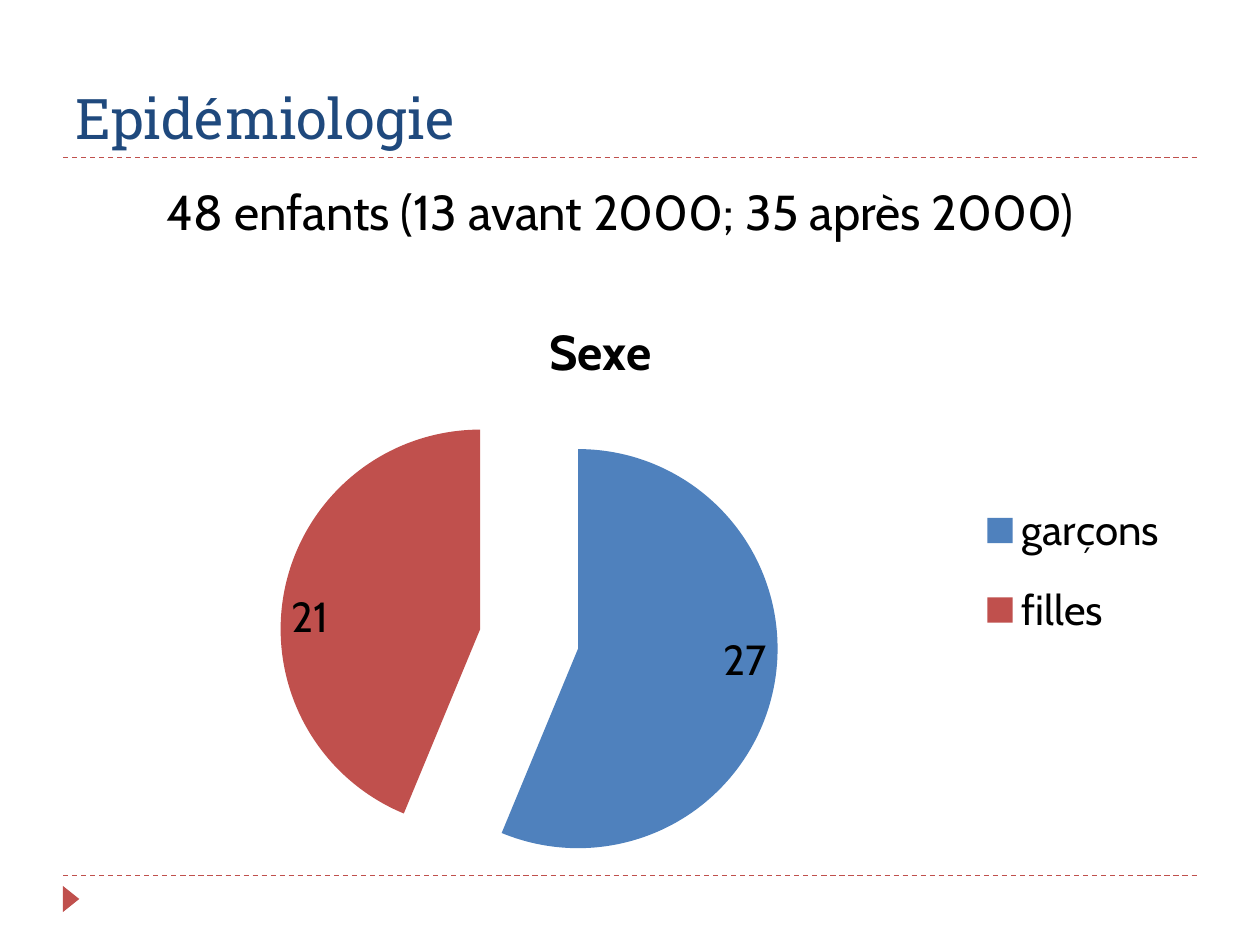
from dataclasses import dataclass

from lxml import etree
from pptx import Presentation
from pptx.chart.data import CategoryChartData
from pptx.dml.color import RGBColor
from pptx.enum.chart import XL_CHART_TYPE, XL_LABEL_POSITION, XL_LEGEND_POSITION
from pptx.enum.dml import MSO_LINE
from pptx.enum.shapes import MSO_CONNECTOR, MSO_SHAPE
from pptx.enum.text import MSO_ANCHOR, PP_ALIGN
from pptx.oxml import parse_xml
from pptx.oxml.ns import nsdecls, qn
from pptx.util import Pt

PIE = XL_CHART_TYPE.PIE
INSIDE_END = XL_LABEL_POSITION.INSIDE_END
RIGHT = XL_LEGEND_POSITION.RIGHT
DASH = MSO_LINE.DASH
STRAIGHT = MSO_CONNECTOR.STRAIGHT
TRIANGLE = MSO_SHAPE.ISOSCELES_TRIANGLE
BOTTOM, TOP = MSO_ANCHOR.BOTTOM, MSO_ANCHOR.TOP
LEFT, CENTER = PP_ALIGN.LEFT, PP_ALIGN.CENTER


@dataclass(frozen=True)
class Theme:
    """Colours, fonts and type sizes of the slide."""
    navy: RGBColor = RGBColor(0x1F, 0x49, 0x7D)
    red: RGBColor = RGBColor(0xC0, 0x50, 0x4D)
    blue: RGBColor = RGBColor(0x4F, 0x81, 0xBD)
    black: RGBColor = RGBColor(0, 0, 0)
    head_font: str = "Roboto Slab"
    body_font: str = "Cabin"
    title: int = 32
    lead: int = 28
    label: int = 24
    base: int = 18


T = Theme()


def set_font(font, size, color=T.black, name=T.body_font, bold=False):
    """Apply typeface, size, colour and weight to a font."""
    font.name, font.size, font.bold = name, Pt(size), bold
    font.color.rgb = color


def write(tf, text, align=LEFT, anchor=TOP, **fmt):
    """Put one formatted paragraph into a text frame."""
    tf.word_wrap = True
    tf.vertical_anchor = anchor
    p = tf.paragraphs[0]
    p.alignment = align
    r = p.add_run()
    r.text = text
    set_font(r.font, **fmt)


def add_rule(s, x, y, w):
    """Draw a dashed horizontal rule."""
    line = s.shapes.add_connector(STRAIGHT, Pt(x), Pt(y), Pt(x + w), Pt(y))
    line.line.color.rgb = T.red
    line.line.width = Pt(0.75)
    line.line.dash_style = DASH
    etree.SubElement(line._element.spPr, qn("a:effectLst"))


def add_frame(s, x, top, w, h):
    """Draw the two rules and the footer marker."""
    for y in (top + h, top):
        add_rule(s, x, y, w)
    sp = s.shapes.add_shape(TRIANGLE, Pt(x - 2.9), Pt(top + h + 8.6), Pt(15), Pt(9.4))
    sp.rotation = 90
    sp.shadow.inherit = False
    sp.fill.solid()
    sp.fill.fore_color.rgb = T.red
    sp.line.fill.background()


def add_title(s, text, x, y, w, h):
    """Place and fill the title placeholder."""
    sp = s.shapes.title
    sp.left, sp.top, sp.width, sp.height = Pt(x), Pt(y), Pt(w), Pt(h)
    write(sp.text_frame, text, anchor=BOTTOM, size=T.title,
          color=T.navy, name=T.head_font)


def add_lead(s, text, x, y, w, h):
    """Add the centred line below the title."""
    sp = s.shapes.add_textbox(Pt(x), Pt(y), Pt(w), Pt(h))
    write(sp.text_frame, text, align=CENTER, size=T.lead)


def set_layout(el, successors, inner=False, **box):
    """Fix a chart part at fractions of the chart area."""
    for old in el.findall(qn("c:layout")):
        el.remove(old)
    target = '<c:layoutTarget val="inner"/>' if inner else ""
    modes = "".join(f'<c:{k}Mode val="edge"/>' for k in "xy")
    sizes = "".join(f'<c:{k} val="{v}"/>' for k, v in box.items())
    layout = parse_xml(f'<c:layout {nsdecls("c")}><c:manualLayout>'
                       f'{target}{modes}{sizes}</c:manualLayout></c:layout>')
    el.insert_element_before(layout, *successors)


def add_pie(s, title, values, colors, x, y, w, h):
    """Add the exploded pie with its title, labels and legend."""
    data = CategoryChartData()
    data.categories = list(values)
    data.add_series("Series 1", list(values.values()))
    chart = s.shapes.add_chart(PIE, Pt(x), Pt(y), Pt(w), Pt(h), data).chart
    set_font(chart.font, T.base)

    chart.has_title = True
    write_title = chart.chart_title.text_frame.paragraphs[0].add_run()
    write_title.text = title
    set_font(write_title.font, T.lead, bold=True)
    set_layout(chart.chart_title._element, ("c:overlay", "c:spPr", "c:txPr"),
               x=0.42, y=0.04)

    chart.has_legend = True
    legend = chart.legend
    legend.position = RIGHT
    legend.include_in_layout = False
    set_font(legend.font, T.label)
    set_layout(legend._element, ("c:overlay", "c:spPr", "c:txPr"),
               x=0.8, y=0.31, w=0.18, h=0.3)

    plot = chart.plots[0]
    plot.vary_by_categories = True
    series = plot.series[0]
    for i, color in enumerate(colors):
        fill = series.points[i].format.fill
        fill.solid()
        fill.fore_color.rgb = color
    explosion = parse_xml(f'<c:explosion {nsdecls("c")} val="25"/>')
    series._element.insert_element_before(explosion, "c:dPt", "c:dLbls", "c:cat", "c:val")

    plot.has_data_labels = True
    labels = plot.data_labels
    labels.show_value = True
    labels.show_percentage = False
    labels.position = INSIDE_END
    set_font(labels.font, T.label)
    area = chart._chartSpace.chart.plotArea
    set_layout(area, ("c:pieChart",), inner=True, x=0.19, y=0.17, w=0.44, h=0.8)


def main():
    """Build and save the slide."""
    prs = Presentation()
    prs.slide_width, prs.slide_height = Pt(720), Pt(540)
    s = prs.slides.add_slide(prs.slide_layouts[5])
    add_frame(s, 36, 90, 648, 410.4)
    add_title(s, "Epidémiologie", 36, 12.2, 648, 77.8)
    add_pie(s, "Sexe", {"garçons": 27, "filles": 21}, (T.blue, T.red),
            36.7, 162, 648, 356.4)
    add_lead(s, "48 enfants (13 avant 2000; 35 après 2000)", 76.3, 100, 555.8, 41)
    prs.save("out.pptx")


if __name__ == "__main__":
    main()
